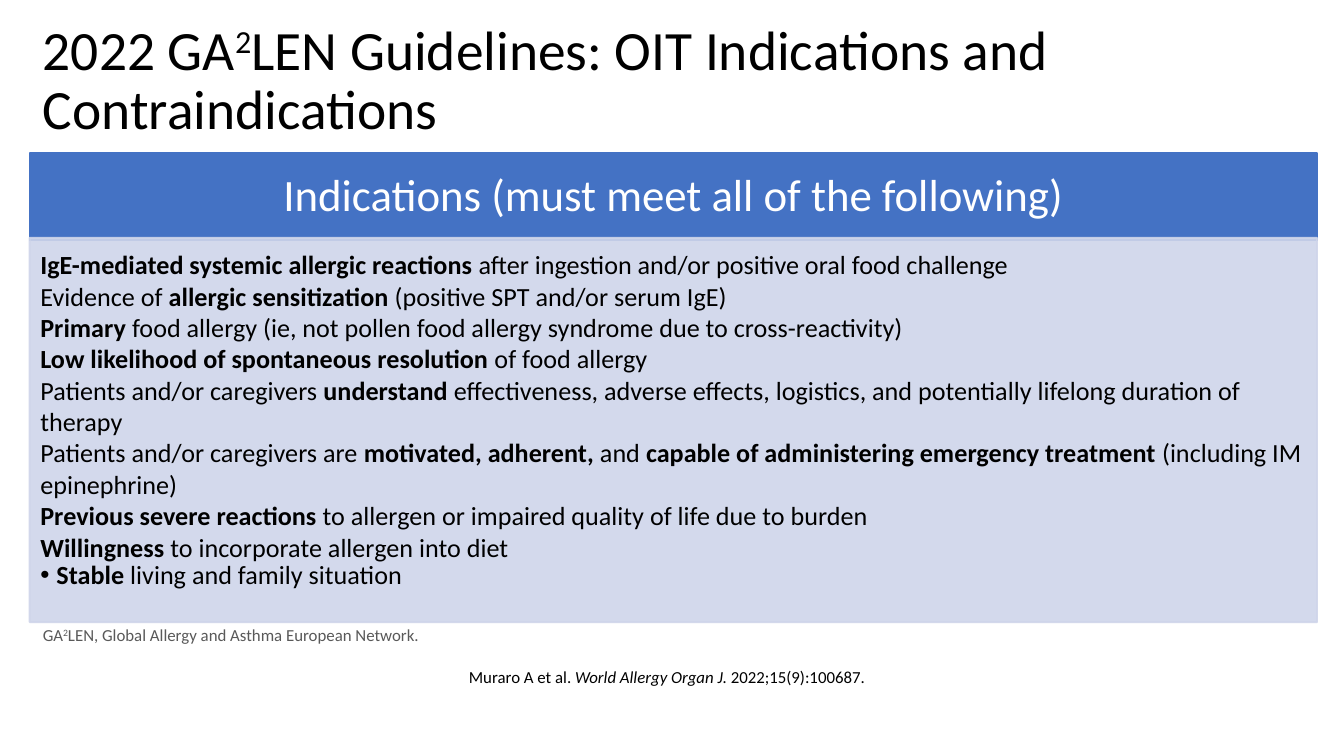
from lxml.etree import SubElement
from pptx import Presentation
from pptx.dml.color import RGBColor
from pptx.enum.shapes import MSO_SHAPE
from pptx.enum.text import MSO_ANCHOR, PP_ALIGN
from pptx.oxml.ns import qn
from pptx.util import Inches, Pt

COLORS = {"header": "4472C4", "panel": "CFD5EA", "black": "000000",
          "white": "FFFFFF", "gray": "595959"}
WIDTH = 10
HEIGHT = WIDTH * 9 / 16
LEFT, CONTENT_WIDTH = 0.022 * WIDTH, 0.958 * WIDTH


def prepare_frame(box, margins, anchor=MSO_ANCHOR.TOP):
    """Wrap the text and set left, top, right and bottom margins in inches."""
    frame = box.text_frame
    frame.word_wrap = True
    frame.vertical_anchor = anchor
    (frame.margin_left, frame.margin_top,
     frame.margin_right, frame.margin_bottom) = map(Inches, margins)
    return frame


def write_spans(para, spans, size, color, spacing):
    """Add (text, style) spans; a style is plain, bold, italic or super."""
    para.line_spacing = spacing
    for text, style in spans:
        span = para.add_run()
        span.text = text
        span.font.name = "Calibri"
        span.font.size = Pt(size)
        span.font.color.rgb = RGBColor.from_string(COLORS[color])
        if style == "bold":
            span.font.bold = True
        elif style == "italic":
            span.font.italic = True
        elif style == "super":
            span.font._element.set("baseline", "30000")


deck = Presentation()
deck.slide_width, deck.slide_height = Inches(WIDTH), Inches(HEIGHT)
page = deck.slides.add_slide(deck.slide_layouts[6])

# Title, citation and abbreviation note
TEXT_MARGINS = (0.1, 0.05, 0.1, 0.05)
texts = [
    (LEFT, 0.14, CONTENT_WIDTH, 0.94, MSO_ANCHOR.MIDDLE, 29.7, "black", 0.9,
     [("2022 GA", "plain"), ("2", "super"),
      ("LEN Guidelines: OIT Indications and Contraindications", "plain")]),
    (0.339 * WIDTH, 4.93, 0.661 * WIDTH, 0.6, MSO_ANCHOR.TOP, 9, "black", 0.9,
     [("Muraro A et al. ", "plain"), ("World Allergy Organ J. ", "italic"),
      ("2022;15(9):100687.", "plain")]),
    (LEFT, 4.64, CONTENT_WIDTH, 0.22, MSO_ANCHOR.TOP, 9, "gray", 0.7,
     [("GA", "plain"), ("2", "super"),
      ("LEN, Global Allergy and Asthma European Network.", "plain")]),
]
for left, top, width, height, anchor, size, color, spacing, spans in texts:
    box = page.shapes.add_textbox(*map(Inches, (left, top, width, height)))
    frame = prepare_frame(box, TEXT_MARGINS, anchor)
    write_spans(frame.paragraphs[0], spans, size, color, spacing)

# Header band and translucent panel
bands = {}
for name, top, height in [("header", 1.14, 0.65), ("panel", 1.77, 2.86)]:
    band = page.shapes.add_shape(
        MSO_SHAPE.RECTANGLE, *map(Inches, (LEFT, top, CONTENT_WIDTH, height)))
    band.shadow.inherit = False
    band.line.width = Pt(1)
    for paint in (band.fill, band.line.fill):
        paint.solid()
        paint.fore_color.rgb = RGBColor.from_string(COLORS[name])
    bands[name] = band
for color in bands["panel"]._element.spPr.iter(qn("a:srgbClr")):
    SubElement(color, qn("a:alpha"), val="90000")

frame = prepare_frame(bands["header"], (0.19, 0.11, 0.19, 0.11), MSO_ANCHOR.MIDDLE)
frame.paragraphs[0].alignment = PP_ALIGN.CENTER
write_spans(frame.paragraphs[0],
            [("Indications (must meet all of the following)", "plain")],
            24, "white", 0.9)

# Indications: spans between asterisks are bold
indications = [
    "*IgE-mediated systemic allergic reactions *after ingestion and/or positive oral food challenge",
    "Evidence of *allergic sensitization *(positive SPT and/or serum IgE)",
    "*Primary* food allergy (ie, not pollen food allergy syndrome due to cross-reactivity)",
    "*Low likelihood of spontaneous resolution *of food allergy",
    "Patients and/or caregivers *understand* effectiveness, adverse effects, logistics, "
    "and potentially lifelong duration of therapy",
    "Patients and/or caregivers are *motivated, adherent,* and *capable of administering "
    "emergency treatment *(including IM epinephrine)",
    "*Previous severe reactions *to allergen or impaired quality of life due to burden",
    "*Willingness* to incorporate allergen into diet",
    "*Stable* living and family situation",
]
frame = prepare_frame(bands["panel"], (0.08, 0.08, 0.11, 0.12))
for number, indication in enumerate(indications):
    para = frame.paragraphs[0] if number == 0 else frame.add_paragraph()
    para.alignment = PP_ALIGN.LEFT
    is_last = number == len(indications) - 1
    if is_last:
        properties = para._p.get_or_add_pPr()
        properties.set("marL", str(Inches(0.12)))
        properties.set("indent", str(-Inches(0.12)))
        SubElement(properties, qn("a:buFont"), typeface="Arial")
        SubElement(properties, qn("a:buChar"), char="•")
    spans = [(text, "bold" if part % 2 else "plain")
             for part, text in enumerate(indication.split("*")) if text]
    write_spans(para, spans, 14, "black", 0.9 if is_last else 1.0)

deck.save("out.pptx")
